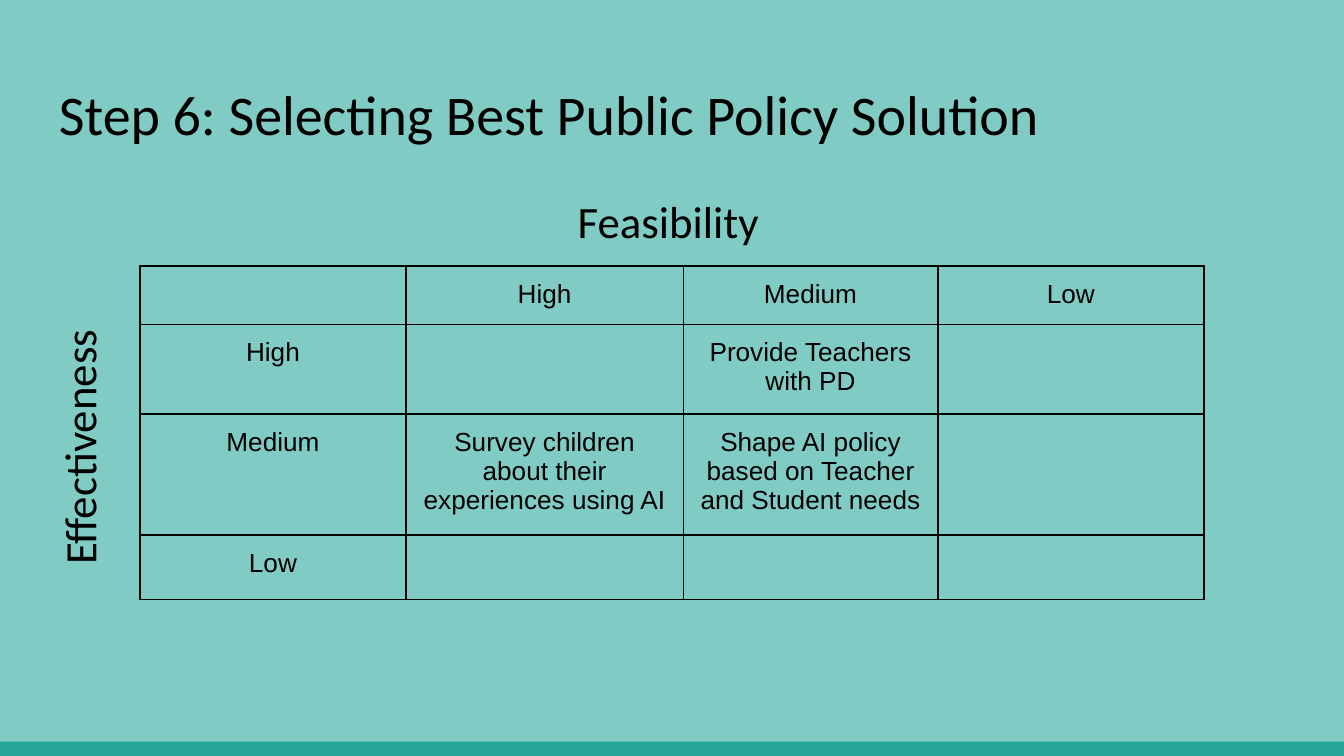
"""Build the policy selection slide: a grid of feasibility against effectiveness."""
from lxml.etree import SubElement
from pptx import Presentation
from pptx.dml.color import RGBColor as Rgb
from pptx.enum.shapes import MSO_SHAPE as Shape
from pptx.enum.text import MSO_ANCHOR as Anchor, PP_ALIGN as Align
from pptx.oxml.ns import qn
from pptx.util import Pt

HUES = {"back": "80CBC4", "bar": "26A69A", "ink": "000000"}
WIDE, HIGH, PAD = 720, 405, 7.2
LABELS = [
    ("Step 6: Selecting Best Public Policy Solution", (24.5, 35.5, 671, 48), 30, Align.LEFT, 1, 0),
    ("Feasibility", (22.5, 92, 671, 48), 24, Align.CENTER, 1.15, 0),
    ("Effectiveness", (-49, 196, 183, 44), 24, Align.LEFT, 1, 270),
]
GRID = [
    ["", "High", "Medium", "Low"],
    ["High", "", "Provide Teachers with PD", ""],
    ["Medium", "Survey children about their experiences using AI",
     "Shape AI policy based on Teacher and Student needs", ""],
    ["Low", "", "", ""],
]
COLS = [142.5, 148.5, 136.5, 142.5]
ROWS = [30, 45.5, 61.5, 34.5]


def hue(name):
    return Rgb.from_string(HUES[name])


def style(para, face, size, align):
    para.alignment = align
    para.font.name, para.font.size = face, Pt(size)
    para.font.color.rgb = hue("ink")


def inset(part):
    part.margin_left = part.margin_right = Pt(PAD)
    part.margin_top = part.margin_bottom = Pt(PAD)


def add_label(slide, text, area, size, align, space, turn):
    box = slide.shapes.add_textbox(*map(Pt, area))
    box.rotation = turn
    frame = box.text_frame
    frame.word_wrap = True
    frame.vertical_anchor = Anchor.TOP
    inset(frame)
    para = frame.paragraphs[0]
    para.text = text
    para.line_spacing = space
    style(para, "Calibri", size, align)


def edge(cell):
    props = cell._tc.get_or_add_tcPr()
    for spot, side in enumerate(("a:lnL", "a:lnR", "a:lnT", "a:lnB")):
        line = props.makeelement(qn(side), {"w": str(Pt(0.75))})
        fill = SubElement(line, qn("a:solidFill"))
        SubElement(fill, qn("a:srgbClr"), val=HUES["ink"])
        props.insert(spot, line)


def add_grid(slide):
    area = (75, 142.5, sum(COLS), sum(ROWS))
    table = slide.shapes.add_table(len(ROWS), len(COLS), *map(Pt, area)).table
    table.first_row = table.horz_banding = False
    for col, width in zip(table.columns, COLS):
        col.width = Pt(width)
    for row, height, texts in zip(table.rows, ROWS, GRID):
        row.height = Pt(height)
        for cell, text in zip(row.cells, texts):
            cell.fill.background()
            edge(cell)
            if text:
                cell.text = text
                inset(cell)
                style(cell.text_frame.paragraphs[0], "Arial", 14, Align.CENTER)


def main():
    deck = Presentation()
    deck.slide_width, deck.slide_height = Pt(WIDE), Pt(HIGH)
    slide = deck.slides.add_slide(deck.slide_layouts[6])
    slide.background.fill.solid()
    slide.background.fill.fore_color.rgb = hue("back")

    thick = 7.7
    bar = slide.shapes.add_shape(Shape.RECTANGLE, 0, Pt(HIGH - thick), Pt(WIDE), Pt(thick))
    bar.shadow.inherit = False
    bar.fill.solid()
    bar.fill.fore_color.rgb = hue("bar")
    bar.line.fill.background()

    for label in LABELS:
        add_label(slide, *label)
    add_grid(slide)
    deck.save("out.pptx")


if __name__ == "__main__":
    main()
